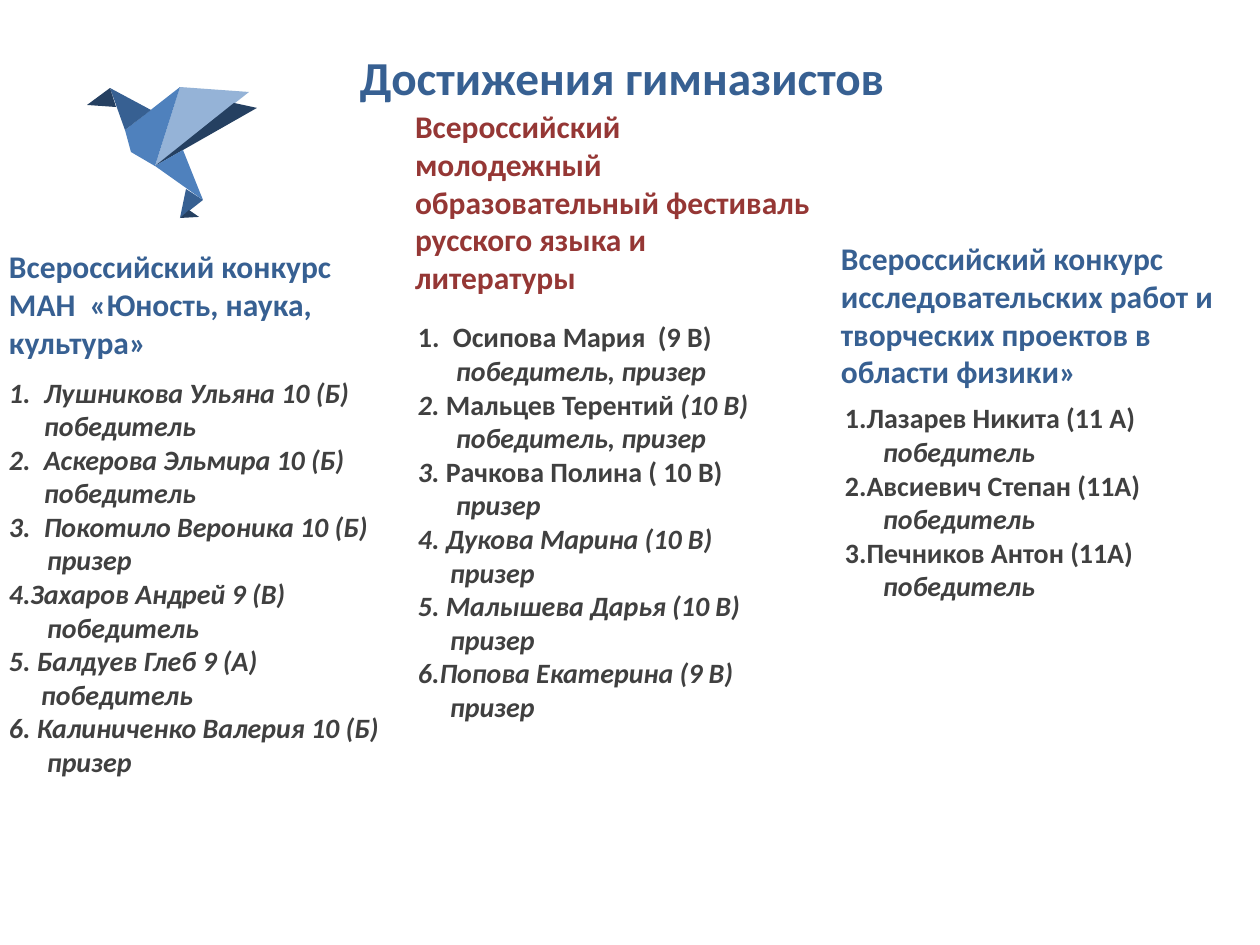
from lxml import etree
from pptx import Presentation
from pptx.dml.color import RGBColor
from pptx.enum.text import MSO_ANCHOR, MSO_AUTO_SIZE, PP_ALIGN
from pptx.oxml.ns import qn
from pptx.util import Pt

TOP, MID, LOW = MSO_ANCHOR.TOP, MSO_ANCHOR.MIDDLE, MSO_ANCHOR.BOTTOM
LEFT, CENTER, JUST = PP_ALIGN.LEFT, PP_ALIGN.CENTER, PP_ALIGN.JUSTIFY
FIXED = MSO_AUTO_SIZE.NONE
UNIT = 914400 / 126
THEME = {
    "font": "Calibri",
    "title": (27, "376092"),
    "blue": (18, "376092"),
    "red": (18, "953735"),
    "body": (16, "404040"),
}
SIDE = 6  # top and bottom inset of a text box
# left margin and first-line indent of each kind of line
INDENT = {"num": (35, -35), "name": (0, 0), "award": (38, 0), "near": (32, 0)}

TITLE = "Достижения гимназистов"
# each line: kind, then (text, italic) runs
COLUMNS = [
    {
        "head": "Всероссийский конкурс МАН  «Юность, наука, культура»",
        "style": "blue", "anchor": TOP, "align": LEFT,
        "head_box": (9, 241, 383, 154), "list_box": (9, 369, 379, 420),
        "lines": [
            ("num", ("Лушникова Ульяна 10 (Б) победитель", True)),
            ("num", ("Аскерова Эльмира 10 (Б) победитель", True)),
            ("num", ("Покотило Вероника 10 (Б)", True)),
            ("award", ("призер", True)),
            ("name", ("4.Захаров Андрей 9 (В)", True)),
            ("award", ("победитель", True)),
            ("name", ("5. Балдуев Глеб 9 (А)", True)),
            ("near", ("победитель", True)),
            ("name", ("6. Калиниченко Валерия 10 (Б)", True)),
            ("award", ("призер", True)),
        ],
    },
    {
        "head": "Всероссийский молодежный образовательный фестиваль "
                "русского языка и литературы",
        "style": "red", "anchor": LOW, "align": LEFT,
        "head_box": (415, 136, 399, 166), "list_box": (418, 314, 350, 454),
        "lines": [
            ("num", ("Осипова Мария  (9 В)", False)),
            ("award", ("победитель, призер", True)),
            ("name", ("2. ", True), ("Мальцев Терентий ", False),
             ("(10 В)", True)),
            ("award", ("победитель, призер", True)),
            ("name", ("3. ", True), ("Рачкова Полина ( 10 В)", False)),
            ("award", ("призер", True)),
            ("name", ("4. Дукова Марина (10 В)", True)),
            ("near", ("призер", True)),
            ("name", ("5. Малышева Дарья (10 В)", True)),
            ("near", ("призер", True)),
            ("name", ("6.Попова Екатерина (9 В)", True)),
            ("near", ("призер", True)),
        ],
    },
    {
        "head": "Всероссийский конкурс исследовательских работ и "
                "творческих проектов в области физики»",
        "style": "blue", "anchor": MID, "align": JUST,
        "head_box": (841, 203, 399, 223), "list_box": (845, 395, 391, 278),
        "lines": [
            ("name", ("1.Лазарев Никита (11 А)", False)),
            ("award", ("победитель", True)),
            ("name", ("2.Авсиевич Степан (11А)", False)),
            ("award", ("победитель", True)),
            ("name", ("3.Печников Антон (11А)", False)),
            ("award", ("победитель", True)),
        ],
    },
]
BIRD = [
    ("95B3D7", [(180, 87), (249, 92), (155, 166)]),
    ("4F81BD", [(125, 130), (180, 87), (155, 166), (131, 152)]),
    ("376092", [(110, 88), (151, 110), (125, 130)]),
    ("254061", [(87, 105), (110, 88), (116, 107)]),
    ("254061", [(257, 108), (234, 103), (155, 166)]),
    ("4F81BD", [(203, 200), (183, 150), (155, 166)]),
    ("376092", [(180, 218), (186, 189), (203, 200)]),
    ("254061", [(199, 217), (189, 210), (180, 218)]),
]


def px(num):
    return round(num * UNIT)


def assign(obj, vals):
    for key, val in vals.items():
        setattr(obj, key, val)


def place(shape, box, anchor, side=SIDE):
    """Set position, insets and anchor, and return the text frame."""
    assign(shape, dict(zip(("left", "top", "width", "height"), map(px, box))))
    frame = shape.text_frame
    assign(frame, {
        "word_wrap": True, "auto_size": FIXED, "vertical_anchor": anchor,
        "margin_left": 0, "margin_right": 0,
        "margin_top": px(side), "margin_bottom": px(side),
    })
    return frame


def write(para, runs, style, align):
    size, color = THEME[style]
    para.alignment = align
    for text, ital in runs:
        run = para.add_run()
        run.text = text
        assign(run.font, {"name": THEME["font"], "size": Pt(size),
                          "bold": True, "italic": ital})
        run.font.color.rgb = RGBColor.from_string(color)


def indent(para, kind):
    props = para._p.get_or_add_pPr()
    for key, val in zip(("marL", "indent"), INDENT[kind]):
        props.set(key, str(px(val)))
    if kind == "num":
        etree.SubElement(props, qn("a:buAutoNum"), type="arabicPeriod")


def add_column(shapes, col):
    head = place(shapes.add_textbox(0, 0, 0, 0), col["head_box"], col["anchor"])
    write(head.paragraphs[0], [(col["head"], False)], col["style"], LEFT)
    body = place(shapes.add_textbox(0, 0, 0, 0), col["list_box"], TOP)
    for idx, (kind, *runs) in enumerate(col["lines"]):
        para = body.add_paragraph() if idx else body.paragraphs[0]
        indent(para, kind)
        write(para, runs, "body", col["align"])


def add_bird(shapes):
    group = shapes.add_group_shape().shapes
    for color, (start, *rest) in BIRD:
        pen = group.build_freeform(*start, scale=UNIT)
        pen.add_line_segments(rest, close=True)
        part = pen.convert_to_shape()
        part.shadow.inherit = False
        part.fill.solid()
        part.fill.fore_color.rgb = RGBColor.from_string(color)
        part.line.fill.background()


def main():
    deck = Presentation()
    assign(deck, {"slide_width": px(1260), "slide_height": px(945)})
    shapes = deck.slides.add_slide(deck.slide_layouts[5]).shapes
    title = place(shapes.title, (60, 48, 1124, 117), TOP, 0)
    write(title.paragraphs[0], [(TITLE, False)], "title", CENTER)
    for col in COLUMNS:
        add_column(shapes, col)
    add_bird(shapes)
    deck.save("out.pptx")


if __name__ == "__main__":
    main()
